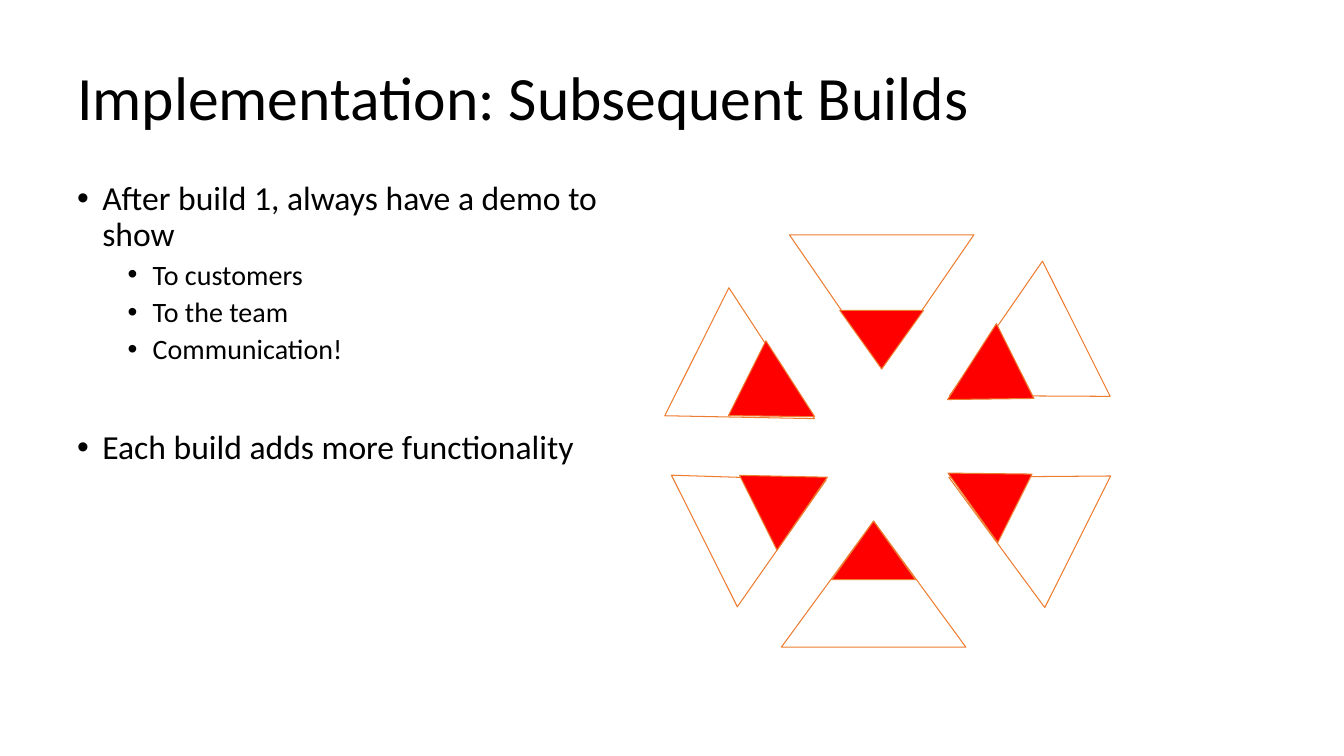
import pptx
import pptx.util
import pptx.dml.color
import pptx.enum.shapes
import pptx.enum.text
import pptx.oxml

Inches, Pt = pptx.util.Inches, pptx.util.Pt
RGBColor = pptx.dml.color.RGBColor
BLACK = RGBColor(0x00, 0x00, 0x00)
RED = RGBColor(0xFF, 0x00, 0x00)
ORANGE = RGBColor(0xED, 0x7D, 0x31)
FONT = "Calibri"
WIDE, HIGH = 13.33, 7.5
LEFT = 0.05 * WIDE

# Content: bullets as level, text, space before
TITLE = "Implementation: Subsequent Builds"
BULLETS = [
    (0, "After build 1, always have a demo to show", 10),
    (1, "To customers", 5),
    (1, "To the team", 5),
    (1, "Communication!", 5),
    (0, "Each build adds more functionality", 46.4),
]
# Size and indent of each bullet level
LEVELS = [(24, 0.25), (20, 0.75)]

# Each build: turn, flips, then whole and done part
# as left, top, width, height, apex (in one-inch grid cells)
BUILDS = [
    (0, "V", (7.83, 2.33, 1.83, 1.33, 0.5), (8.33, 3.08, 0.83, 0.58, 0.5)),
    (0, "", (7.75, 5.17, 1.83, 1.25, 0.5), (8.25, 5.17, 0.83, 0.58, 0.5)),
    (63.4, "", (6.86, 4.39, 1.46, 1.35, 0.5), (7.45, 4.53, 0.83, 0.77, 0.49)),
    (296.6, "H", (9.32, 4.34, 1.46, 1.43, 0.5), (9.35, 4.5, 0.76, 0.75, 0.48)),
    (296.6, "V", (6.8, 3.12, 1.42, 1.34, 0.45), (7.34, 3.54, 0.83, 0.77, 0.45)),
    (63.4, "HV", (9.29, 2.87, 1.5, 1.42, 0.48), (9.31, 3.37, 0.83, 0.77, 0.45)),
]


def add_box(slide, top, width, height):
    box = slide.shapes.add_textbox(
        Inches(LEFT), Inches(top), Inches(width), Inches(height))
    box.text_frame.word_wrap = True
    return box.text_frame


def style(para, size):
    para.line_spacing = 0.9
    for run in para.runs:
        run.font.name = FONT
        run.font.size = Pt(size)
        run.font.color.rgb = BLACK


def add_bullet(para, indent):
    props = para._p.get_or_add_pPr()
    props.set("marL", str(Inches(indent)))
    props.set("indent", str(-Inches(0.25)))
    for tag, key, value in (("buFont", "typeface", "Arial"),
                            ("buChar", "char", "•")):
        item = pptx.oxml.xmlchemy.OxmlElement("a:" + tag)
        item.set(key, value)
        props.append(item)


def add_part(slide, turn, flips, part, fill=None):
    *place, apex = part
    shape = slide.shapes.add_shape(
        pptx.enum.shapes.MSO_SHAPE.ISOSCELES_TRIANGLE,
        *[Inches(cell) for cell in place])
    shape.adjustments[0] = apex
    shape.rotation = turn
    for axis in flips:
        shape._element.spPr.xfrm.set("flip" + axis, "1")
    shape.shadow.inherit = False
    if fill is None:
        shape.fill.background()
    else:
        shape.fill.solid()
        shape.fill.fore_color.rgb = fill
    shape.line.color.rgb = ORANGE
    shape.line.width = Pt(0.75)


def main():
    deck = pptx.Presentation()
    deck.slide_width, deck.slide_height = Inches(WIDE), Inches(HIGH)
    slide = deck.slides.add_slide(deck.slide_layouts[6])

    # Title
    frame = add_box(slide, 0.5, WIDE - 1.55, 1)
    frame.vertical_anchor = pptx.enum.text.MSO_ANCHOR.MIDDLE
    frame.text = TITLE
    style(frame.paragraphs[0], 44)

    # Bullets
    frame = add_box(slide, 1.75, 5.94, 4.83)
    frame.text = "\n".join(text for _, text, _ in BULLETS)
    for para, (level, _, gap) in zip(frame.paragraphs, BULLETS):
        size, indent = LEVELS[level]
        para.level = level
        para.space_before = Pt(gap)
        style(para, size)
        add_bullet(para, indent)

    # Ring of builds: whole triangle, then its done part
    for turn, flips, whole, done in BUILDS:
        add_part(slide, turn, flips, whole)
        add_part(slide, turn, flips, done, RED)

    deck.save("out.pptx")


if __name__ == "__main__":
    main()
